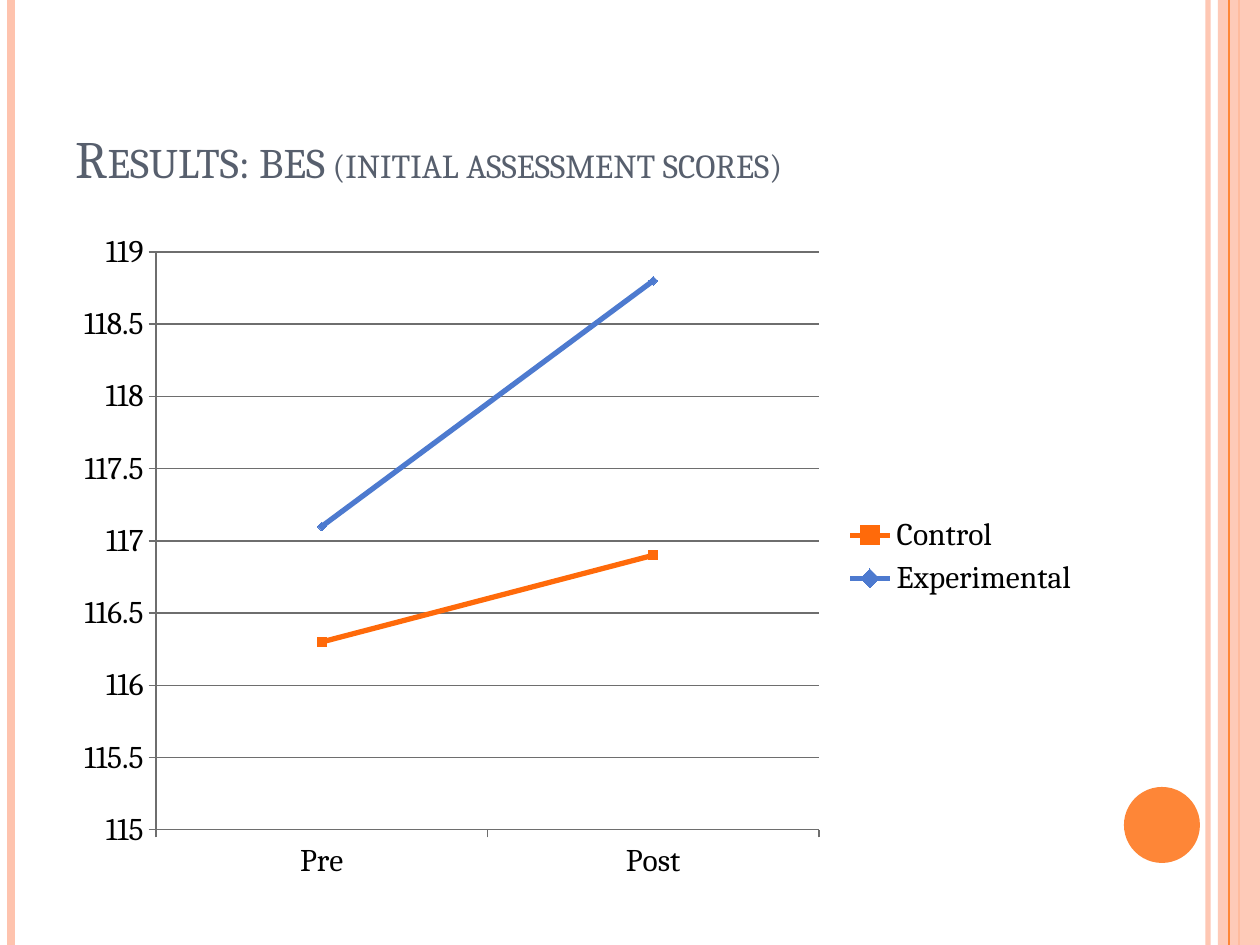
from dataclasses import dataclass

from lxml.etree import SubElement
from pptx import Presentation
from pptx.chart.data import CategoryChartData
from pptx.dml.color import RGBColor
from pptx.enum.chart import XL_CHART_TYPE as ChartType, XL_LEGEND_POSITION as LegendPosition
from pptx.enum.chart import XL_MARKER_STYLE as Marker, XL_TICK_MARK as TickMark
from pptx.enum.shapes import MSO_CONNECTOR as Connector, MSO_SHAPE as Shape
from pptx.enum.text import MSO_ANCHOR as Anchor
from pptx.oxml import parse_xml
from pptx.oxml.ns import nsdecls, qn
from pptx.slide import Slide
from pptx.util import Pt

EMU_PER_PX = 914400 / 126


@dataclass(frozen=True)
class Theme:
    """Colours and type sizes of the slide."""
    font: str = "Cambria"
    title: str = "575F6D"
    pale: str = "FEC3AE"
    accent: str = "FE8637"
    control: str = "FF6A0A"
    experimental: str = "4D7ACF"
    grid: str = "6E6E6E"
    text: str = "000000"
    title_size: int = 30
    subtitle_size: int = 24
    chart_size: int = 18


@dataclass(frozen=True)
class Box:
    """A rectangle in px."""
    left: int
    top: int
    width: int
    height: int

    def emu(self) -> tuple[int, ...]:
        """Return the four lengths in EMU."""
        return tuple(px(value) for value in (self.left, self.top, self.width, self.height))


@dataclass(frozen=True)
class Stripe:
    """A full-height vertical line."""
    x: int
    color: str
    weight: float
    opacity: int = 100


@dataclass(frozen=True)
class Series:
    """One line of the chart."""
    name: str
    values: tuple[float, ...]
    color: str
    marker: Marker


THEME = Theme()
SLIDE = Box(0, 0, 1260, 945)
BAND = Box(1218, 0, 42, 945)
DISC = Box(1124, 787, 76, 76)
TITLE = Box(63, 38, 1029, 157)
CHART = Box(63, 221, 1029, 672)
PLOT = Box(156, 252, 663, 578)
BACK_STRIPES = (
    Stripe(1208, THEME.pale, 3, 93),
    Stripe(11, THEME.pale, 4.5),
    Stripe(1239, THEME.accent, 1.5),
)
FRONT_STRIPE = Stripe(1229, THEME.accent, 0.75)
CATEGORIES = ("Pre", "Post")
SERIES = (
    Series("Control", (116.3, 116.9), THEME.control, Marker.SQUARE),
    Series("Experimental", (117.1, 118.8), THEME.experimental, Marker.DIAMOND),
)


def px(value: int) -> int:
    """Turn px into EMU."""
    return round(value * EMU_PER_PX)


def rgb(color: str) -> RGBColor:
    """Turn a hex string into a colour."""
    return RGBColor.from_string(color)


def set_opacity(element, percent: int) -> None:
    """Make the solid colour inside an element translucent."""
    if percent < 100:
        color = next(element.iter(qn("a:srgbClr")))
        SubElement(color, qn("a:alpha")).set("val", str(percent * 1000))


def draw_stripe(slide: Slide, stripe: Stripe) -> None:
    """Draw a line from the top to the bottom of the slide."""
    x = px(stripe.x)
    line = slide.shapes.add_connector(Connector.STRAIGHT, x, 0, x, px(SLIDE.height))
    line.line.color.rgb = rgb(stripe.color)
    line.line.width = Pt(stripe.weight)
    properties = line._element.spPr
    set_opacity(properties, stripe.opacity)
    SubElement(properties, qn("a:effectLst"))


def draw_shape(slide: Slide, kind: Shape, box: Box, color: str, opacity: int = 100) -> None:
    """Draw a filled shape without an outline."""
    shape = slide.shapes.add_shape(kind, *box.emu())
    shape.shadow.inherit = False
    shape.fill.solid()
    shape.fill.fore_color.rgb = rgb(color)
    shape.line.fill.background()
    set_opacity(shape._element.spPr, opacity)


def draw_title(slide: Slide) -> None:
    """Write the title in small capitals."""
    frame = slide.shapes.add_textbox(*TITLE.emu()).text_frame
    frame.word_wrap = True
    frame.vertical_anchor = Anchor.BOTTOM
    paragraph = frame.paragraphs[0]
    paragraph.font.name = THEME.font
    paragraph.font.color.rgb = rgb(THEME.title)
    parts = (
        ("Results: ", THEME.title_size),
        ("BES (initial assessment scores)", THEME.subtitle_size),
    )
    for text, size in parts:
        run = paragraph.add_run()
        run.text = text
        run.font.size = Pt(size)
        run._r.get_or_add_rPr().set("cap", "small")


def place_plot(chart) -> None:
    """Fix the inner plot area inside the chart frame."""
    area = chart._chartSpace.chart.plotArea
    for layout in area.findall(qn("c:layout")):
        area.remove(layout)
    fractions = {
        "x": (PLOT.left - CHART.left) / CHART.width,
        "y": (PLOT.top - CHART.top) / CHART.height,
        "w": PLOT.width / CHART.width,
        "h": PLOT.height / CHART.height,
    }
    sizes = "".join(f'<c:{key} val="{value:.4f}"/>' for key, value in fractions.items())
    area.insert(0, parse_xml(
        f'<c:layout {nsdecls("c")}><c:manualLayout><c:layoutTarget val="inner"/>'
        f'<c:xMode val="edge"/><c:yMode val="edge"/>{sizes}</c:manualLayout></c:layout>'))


def draw_chart(slide: Slide) -> None:
    """Draw the line chart of the scores."""
    data = CategoryChartData()
    data.categories = CATEGORIES
    for series in SERIES:
        data.add_series(series.name, series.values)
    chart = slide.shapes.add_chart(ChartType.LINE_MARKERS, *CHART.emu(), data).chart
    chart.has_title = False
    chart.font.name = THEME.font
    chart.font.size = Pt(THEME.chart_size)
    chart.font.color.rgb = rgb(THEME.text)
    chart.has_legend = True
    chart.legend.position = LegendPosition.RIGHT
    chart.legend.include_in_layout = False
    value_axis = chart.value_axis
    value_axis.minimum_scale, value_axis.maximum_scale, value_axis.major_unit = 115, 119, 0.5
    value_axis.has_major_gridlines = True
    value_axis.tick_labels.number_format = "General"
    value_axis.tick_labels.number_format_is_linked = False
    for axis in (chart.category_axis, value_axis):
        axis.major_tick_mark = TickMark.OUTSIDE
    for part in (chart.category_axis, value_axis, value_axis.major_gridlines):
        part.format.line.color.rgb = rgb(THEME.grid)
        part.format.line.width = Pt(0.75)
    chart.plots[0].vary_by_categories = False
    for series, drawn in zip(SERIES, chart.plots[0].series):
        drawn.smooth = False
        drawn.format.line.color.rgb = rgb(series.color)
        drawn.format.line.width = Pt(3)
        drawn.marker.style = series.marker
        drawn.marker.size = 5
        drawn.marker.format.fill.solid()
        drawn.marker.format.fill.fore_color.rgb = rgb(series.color)
        drawn.marker.format.line.color.rgb = rgb(series.color)
    place_plot(chart)


def main() -> None:
    """Build and save the slide."""
    presentation = Presentation()
    presentation.slide_width, presentation.slide_height = px(SLIDE.width), px(SLIDE.height)
    slide = presentation.slides.add_slide(presentation.slide_layouts[6])
    for stripe in BACK_STRIPES:
        draw_stripe(slide, stripe)
    draw_shape(slide, Shape.RECTANGLE, BAND, THEME.pale, 87)
    draw_stripe(slide, FRONT_STRIPE)
    draw_shape(slide, Shape.OVAL, DISC, THEME.accent)
    draw_title(slide)
    draw_chart(slide)
    presentation.save("out.pptx")


if __name__ == "__main__":
    main()
